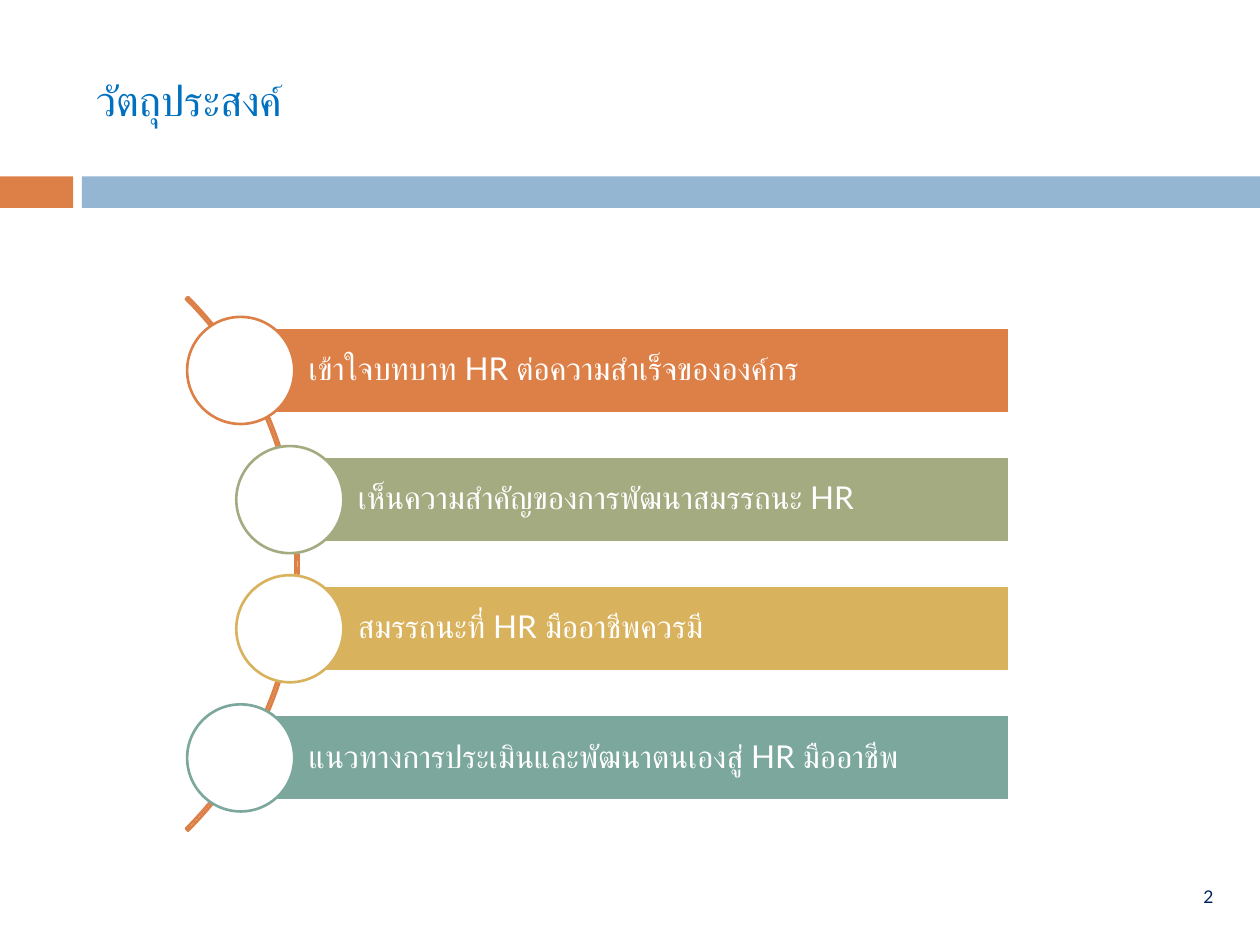
from pptx import Presentation, util as u
from pptx.dml.color import RGBColor
from pptx.enum import shapes, text

WHITE = RGBColor(0xFF, 0xFF, 0xFF)
ORANGE = RGBColor(0xDD, 0x80, 0x47)
BLUE = RGBColor(0x94, 0xB6, 0xD2)
GREEN = RGBColor(0xA5, 0xAB, 0x81)
GOLD = RGBColor(0xD8, 0xB2, 0x5C)
TEAL = RGBColor(0x7B, 0xA7, 0x9D)
TITLE_BLUE = RGBColor(0x00, 0x70, 0xC0)
NAVY = RGBColor(0x00, 0x20, 0x60)

COLUMNS, ROWS = 100, 75
WIDTH, HEIGHT = u.Inches(10), u.Inches(7.5)
BAR_RIGHT, BAR_HEIGHT, BAR_PITCH, FIRST_BAR = 80.1, 6.8, 10.25, 26
CIRCLE = 8.5
OBJECTIVES = [
    ("เข้าใจบทบาท HR ต่อความสำเร็จขององค์กร", ORANGE, 19.1),
    ("เห็นความสำคัญของการพัฒนาสมรรถนะ HR", GREEN, 23),
    ("สมรรถนะที่ HR มืออาชีพควรมี", GOLD, 23),
    ("แนวทางการประเมินและพัฒนาตนเองสู่ HR มืออาชีพ", TEAL, 19.1),
]


def grid_box(column, row, columns, rows):
    """Return left, top, width and height for a block of grid cells."""
    return (round(WIDTH * column / COLUMNS), round(HEIGHT * row / ROWS),
            round(WIDTH * columns / COLUMNS), round(HEIGHT * rows / ROWS))


def add_outlined(slide, kind, box, fill=None, line=None):
    """Add a preset shape with an optional fill and outline."""
    shape = slide.shapes.add_shape(kind, *grid_box(*box))
    shape.shadow.inherit = False
    if fill is None:
        shape.fill.background()
    else:
        shape.fill.solid()
        shape.fill.fore_color.rgb = fill
    if line is None:
        shape.line.fill.background()
    else:
        shape.line.color.rgb = line
        shape.line.width = u.Pt(1.5)
    return shape


def write(shape, words, size, color, font="Lato", align=text.PP_ALIGN.LEFT):
    """Write one vertically centred paragraph and return it."""
    frame = shape.text_frame
    frame.word_wrap = True
    frame.vertical_anchor = text.MSO_ANCHOR.MIDDLE
    paragraph = frame.paragraphs[0]
    paragraph.text = words
    paragraph.alignment = align
    paragraph.font.size = u.Pt(size)
    paragraph.font.name = font
    paragraph.font.color.rgb = color
    return paragraph


def add_label(slide, box, *args, **options):
    """Add a text box holding one paragraph."""
    write(slide.shapes.add_textbox(*grid_box(*box)), *args, **options)


def add_arc(slide):
    """Add the thin quarter ring that links the circles."""
    arc = add_outlined(slide, shapes.MSO_SHAPE.BLOCK_ARC,
                       (-36.2, 14.8, 59.9, 59.9), line=ORANGE)
    for index, value in enumerate((189, 27, 0.004)):
        arc.adjustments[index] = value


def add_objective(slide, index, words, color, left):
    """Add one coloured bar with its text and its circle."""
    top = FIRST_BAR + index * BAR_PITCH
    bar = add_outlined(slide, shapes.MSO_SHAPE.RECTANGLE,
                       (left, top, BAR_RIGHT - left, BAR_HEIGHT), color, WHITE)
    frame = bar.text_frame
    frame.margin_left = u.Inches(0.54)
    frame.margin_right = frame.margin_top = frame.margin_bottom = u.Inches(0.05)
    write(bar, words, 18, WHITE).line_spacing = 0.9
    add_outlined(slide, shapes.MSO_SHAPE.OVAL,
                 (left - CIRCLE / 2, top + (BAR_HEIGHT - CIRCLE) / 2, CIRCLE, CIRCLE),
                 WHITE, color)


def main():
    """Build and save the objectives slide."""
    presentation = Presentation()
    presentation.slide_width, presentation.slide_height = WIDTH, HEIGHT
    slide = presentation.slides.add_slide(presentation.slide_layouts[6])
    for left, width, color in ((0, 5.8, ORANGE), (6.5, 93.5, BLUE)):
        add_outlined(slide, shapes.MSO_SHAPE.RECTANGLE, (left, 14, width, 2.5), color)
    add_label(slide, (93, 69.8, 5.8, 2.7), "2", 10, NAVY, align=text.PP_ALIGN.CENTER)
    add_label(slide, (6.7, 2.5, 89.2, 10.8), "วัตถุประสงค์", 24, TITLE_BLUE,
              font="TeX Gyre Adventor")
    add_arc(slide)
    for index, objective in enumerate(OBJECTIVES):
        add_objective(slide, index, *objective)
    presentation.save("out.pptx")


if __name__ == "__main__":
    main()
